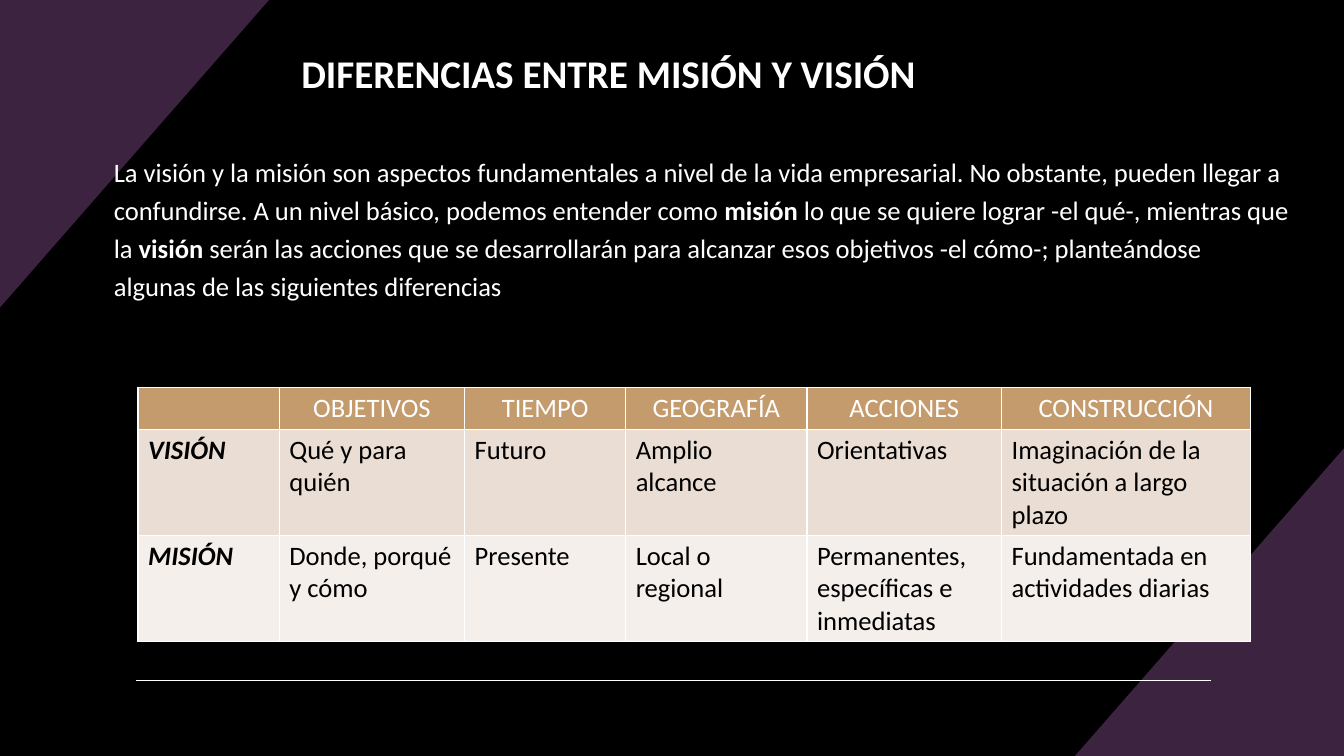
from lxml.etree import SubElement
from pptx import Presentation
from pptx.dml.color import RGBColor as RGB
from pptx.enum.shapes import MSO_CONNECTOR as CONN
from pptx.enum.text import MSO_ANCHOR as ANCHOR, PP_ALIGN as ALIGN
from pptx.oxml.ns import qn
from pptx.util import Cm, Pt

COLORS = {"bg": "000000", "corner": "3C2441", "light": "FFFFFF", "dark": "000000",
          "header": "C49B6D", "band1": "EADED4", "band2": "F5EFEB"}
FONT = "Calibri"
WIDTH, HEIGHT = 33.87, 19.05
CORNER_W, CORNER_H = 6.78, 7.75

INTRO = [
    ("La visión y la misión son aspectos fundamentales a nivel de la vida empresarial. "
     "No obstante, pueden llegar a confundirse. A un nivel básico, podemos entender como ", False),
    ("misión ", True),
    ("lo que se quiere lograr -el qué-, mientras que la ", False),
    ("visión ", True),
    ("serán las acciones que se desarrollarán para alcanzar esos objetivos -el cómo-; "
     "planteándose algunas de las siguientes diferencias", False),
]
ROWS = [
    ["", "OBJETIVOS", "TIEMPO", "GEOGRAFÍA", "ACCIONES", "CONSTRUCCIÓN"],
    ["VISIÓN", "Qué y para quién", "Futuro", "Amplio alcance", "Orientativas",
     "Imaginación de la situación a largo plazo"],
    ["MISIÓN", "Donde, porqué y cómo", "Presente", "Local o regional",
     "Permanentes, específicas e inmediatas", "Fundamentada en actividades diarias"],
]
COL_WIDTHS = [3.56, 4.67, 4.06, 4.57, 4.9, 6.27]
ROW_HEIGHTS = [1.05, 2.67, 2.67]


def color(name):
    return RGB.from_string(COLORS[name])


def set_attrs(obj, **values):
    for name, value in values.items():
        setattr(obj, name, value)


def add_run(p, text, ink="light", size=19, bold=False, italic=False):
    r = p.add_run()
    r.text = text
    set_attrs(r.font, name=FONT, size=Pt(size), bold=bold, italic=italic)
    r.font.color.rgb = color(ink)


def add_corner(slide, points):
    (x, y), *rest = [(Cm(px), Cm(py)) for px, py in points]
    builder = slide.shapes.build_freeform(x, y, scale=1.0)
    builder.add_line_segments(rest, close=True)
    sp = builder.convert_to_shape()
    sp.shadow.inherit = False
    sp.fill.solid()
    sp.fill.fore_color.rgb = color("corner")
    sp.line.fill.background()


def add_rule(slide, x1, x2, y):
    line = slide.shapes.add_connector(CONN.STRAIGHT, Cm(x1), Cm(y), Cm(x2), Cm(y))
    line.line.width = Pt(1)
    line.line.color.rgb = color("light")
    SubElement(line._element.spPr, qn("a:effectLst"))


def set_title(slide, text):
    sp = slide.shapes.title
    set_attrs(sp, left=Cm(7.34), top=Cm(1.12), width=Cm(19.3), height=Cm(1.45))
    tf = sp.text_frame
    set_attrs(tf, word_wrap=False, vertical_anchor=ANCHOR.MIDDLE)
    p = tf.paragraphs[0]
    p.alignment = ALIGN.LEFT
    add_run(p, text, size=28, bold=True)


def add_intro(slide, runs):
    tf = slide.shapes.add_textbox(Cm(2.62), Cm(2.18), Cm(30.12), Cm(6.5)).text_frame
    set_attrs(tf, word_wrap=True, margin_top=Cm(1.58))
    p = tf.paragraphs[0]
    p.line_spacing = 1.2
    for text, bold in runs:
        add_run(p, text, bold=bold)


def add_borders(cell):
    tcPr = cell._tc.get_or_add_tcPr()
    for side in ("lnL", "lnR", "lnT", "lnB"):
        ln = SubElement(tcPr, qn("a:" + side), w=str(Pt(1)))
        fill = SubElement(ln, qn("a:solidFill"))
        SubElement(fill, qn("a:srgbClr"), val=COLORS["light"])


def fill_cell(cell, text, row, col):
    add_borders(cell)
    cell.fill.solid()
    cell.fill.fore_color.rgb = color(("header", "band1", "band2")[row])
    p = cell.text_frame.paragraphs[0]
    p.alignment = ALIGN.LEFT if row else ALIGN.CENTER
    label = row > 0 and col == 0
    if text:
        add_run(p, text, "dark" if row else "light", bold=label, italic=label)
    else:
        p.font.size = Pt(19)


def add_comparison(slide):
    table = slide.shapes.add_table(len(ROWS), len(COL_WIDTHS), Cm(3.48), Cm(9.76),
                                   Cm(sum(COL_WIDTHS)), Cm(sum(ROW_HEIGHTS))).table
    for column, width in zip(table.columns, COL_WIDTHS):
        column.width = Cm(width)
    for i, (texts, height) in enumerate(zip(ROWS, ROW_HEIGHTS)):
        table.rows[i].height = Cm(height)
        for j, text in enumerate(texts):
            fill_cell(table.cell(i, j), text, i, j)


def main():
    prs = Presentation()
    set_attrs(prs, slide_width=Cm(WIDTH), slide_height=Cm(HEIGHT))
    slide = prs.slides.add_slide(prs.slide_layouts[5])
    slide.background.fill.solid()
    slide.background.fill.fore_color.rgb = color("bg")
    add_corner(slide, [(WIDTH, HEIGHT - CORNER_H), (WIDTH, HEIGHT), (WIDTH - CORNER_W, HEIGHT)])
    add_corner(slide, [(0, CORNER_H), (0, 0), (CORNER_W, 0)])
    add_rule(slide, 3.43, 30.53, 17.15)
    set_title(slide, "DIFERENCIAS ENTRE MISIÓN Y VISIÓN")
    add_intro(slide, INTRO)
    add_comparison(slide)
    prs.save("out.pptx")


if __name__ == "__main__":
    main()
